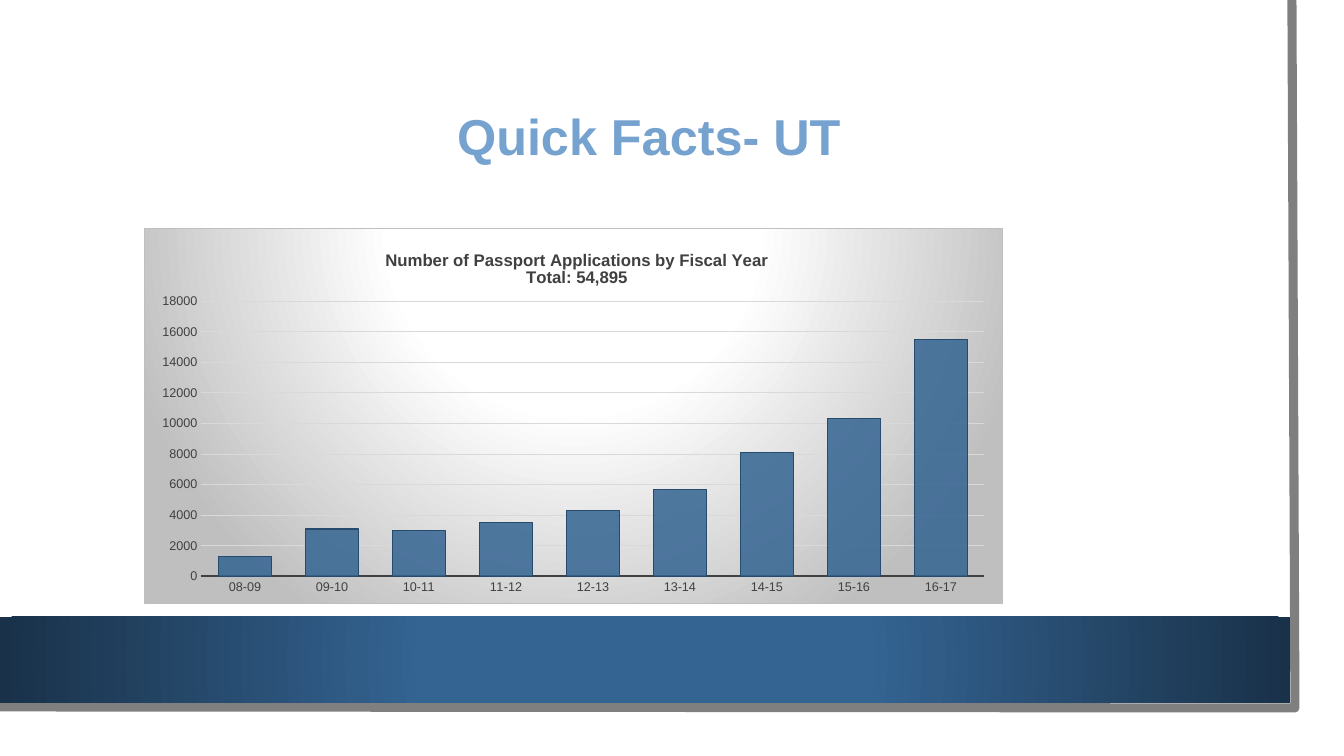
from lxml import etree
from pptx import Presentation
from pptx.chart.data import CategoryChartData
from pptx.dml.color import RGBColor
from pptx.enum.chart import XL_CHART_TYPE, XL_TICK_MARK
from pptx.enum.shapes import MSO_SHAPE
from pptx.enum.text import MSO_ANCHOR, PP_ALIGN
from pptx.oxml import parse_xml
from pptx.oxml.ns import nsdecls, qn
from pptx.util import Pt

COLUMNS = XL_CHART_TYPE.COLUMN_CLUSTERED
NO_TICK = XL_TICK_MARK.NONE
RECT = MSO_SHAPE.RECTANGLE
MIDDLE = MSO_ANCHOR.MIDDLE
CENTER = PP_ALIGN.CENTER

TITLE = "Quick Facts- UT"
CHART_TITLE = ["Number of Passport Applications by Fiscal Year", "Total: 54,895"]
APPLICATIONS = {
    "08-09": 1300, "09-10": 3100, "10-11": 3000, "11-12": 3500, "12-13": 4300,
    "13-14": 5700, "14-15": 8100, "15-16": 10300, "16-17": 15500,
}
FONT = "Arial"
FRAME = [(1292, 0), (1295, 708), (-3, 707)]
BAND = (0, 617, 1290, 86)
TITLE_BOX = (76, 76, 1146, 127)
CHART_BOX = (144, 228, 859, 376)
PLOT_BOX = (201, 301, 784, 276)
CHART_TITLE_BOX = (382, 246, 383, 36)
BAND_STOPS = [(0, "346492"), (34, "346492"), (100, "193149")]
CHART_STOPS = [(0, "FFFFFF"), (39, "FFFFFF"), (100, "BFBFBF")]
EMU_PER_PX = 914400 / 100.8


def px(n):
    return round(n * EMU_PER_PX)


def box(rect):
    return [px(n) for n in rect]


def rgb(color):
    return RGBColor.from_string(color)


def set_font(font, size, color, bold=False):
    font.name, font.size, font.bold = FONT, Pt(size), bold
    font.color.rgb = rgb(color)


def set_line(line, color, width):
    line.color.rgb = rgb(color)
    line.width = Pt(width)


def write(tf, lines, size, color, bold=False, spacing=None):
    for i, text in enumerate(lines):
        p = tf.paragraphs[0] if i == 0 else tf.add_paragraph()
        p.alignment = CENTER
        p.line_spacing = spacing
        r = p.add_run()
        r.text = text
        set_font(r.font, size, color, bold)


def radial(stops, top, bottom):
    gs = "".join(
        f'<a:gs pos="{pos * 1000}"><a:srgbClr val="{color}"/></a:gs>' for pos, color in stops
    )
    return parse_xml(
        f'<a:gradFill {nsdecls("a")} rotWithShape="1"><a:gsLst>{gs}</a:gsLst>'
        f'<a:path path="circle"><a:fillToRect l="50000" t="{top * 1000}" '
        f'r="50000" b="{bottom * 1000}"/></a:path></a:gradFill>'
    )


def place(element, index, rect, inner=False):
    for old in element.findall(qn("c:layout")):
        element.remove(old)
    left, top, width, height = CHART_BOX
    x, y, w, h = rect
    values = [("xMode", "edge"), ("yMode", "edge"),
              ("x", round((x - left) / width, 4)), ("y", round((y - top) / height, 4))]
    if inner:
        values = [("layoutTarget", "inner"), *values,
                  ("w", round(w / width, 4)), ("h", round(h / height, 4))]
    layout = parse_xml(f'<c:layout {nsdecls("c")}><c:manualLayout/></c:layout>')
    for tag, value in values:
        etree.SubElement(layout[0], qn(f"c:{tag}")).set("val", str(value))
    element.insert(index, layout)


def add_frame(slide):
    fb = slide.shapes.build_freeform(*FRAME[0], scale=EMU_PER_PX)
    fb.add_line_segments(FRAME[1:], close=False)
    sp = fb.convert_to_shape()
    sp.shadow.inherit = False
    sp.fill.background()
    set_line(sp.line, "7F7F7F", 6.5)


def add_band(slide):
    sp = slide.shapes.add_shape(RECT, *box(BAND))
    sp.shadow.inherit = False
    sp.line.fill.background()
    sp.fill.solid()
    solid = sp.element.spPr.find(qn("a:solidFill"))
    solid.getparent().replace(solid, radial(BAND_STOPS, 50, 50))


def add_title(slide):
    sp = slide.shapes.title
    sp.left, sp.top, sp.width, sp.height = box(TITLE_BOX)
    sp.text_frame.vertical_anchor = MIDDLE
    write(sp.text_frame, [TITLE], 36, "75A2CE", bold=True, spacing=0.9)


def style_axis(axis):
    axis.major_tick_mark = axis.minor_tick_mark = NO_TICK
    set_font(axis.tick_labels.font, 9, "404040")


def add_applications_chart(slide):
    data = CategoryChartData()
    data.categories = list(APPLICATIONS)
    data.add_series("Series 1", list(APPLICATIONS.values()))
    chart = slide.shapes.add_chart(COLUMNS, *box(CHART_BOX), data).chart
    body = chart.element.find(qn("c:chart"))
    set_font(chart.font, 10, "000000")
    chart.has_legend = False
    chart.has_title = True
    write(chart.chart_title.text_frame, CHART_TITLE, 12, "404040", bold=True)

    plot = chart.plots[0]
    plot.gap_width = 65
    plot.vary_by_categories = False
    fmt = plot.series[0].format
    fmt.fill.solid()
    fmt.fill.fore_color.rgb = rgb("346492")
    color = next(next(body.iter(qn("c:ser"))).iter(qn("a:srgbClr")))
    etree.SubElement(color, qn("a:alpha")).set("val", "85000")
    set_line(fmt.line, "274B6D", 0.75)

    years, counts = chart.category_axis, chart.value_axis
    style_axis(years)
    style_axis(counts)
    set_line(years.format.line, "404040", 1.5)
    counts.format.line.fill.background()
    counts.minimum_scale, counts.maximum_scale, counts.major_unit = 0, 18000, 2000
    counts.has_major_gridlines = True
    set_line(counts.major_gridlines.format.line, "D9D9D9", 0.75)

    place(body.find(qn("c:plotArea")), 0, PLOT_BOX, inner=True)
    place(body.find(qn("c:title")), 1, CHART_TITLE_BOX)
    background = parse_xml(
        f'<c:spPr {nsdecls("c", "a")}><a:ln w="{int(Pt(0.75))}"><a:solidFill>'
        '<a:srgbClr val="BFBFBF"/></a:solidFill></a:ln></c:spPr>'
    )
    background.insert(0, radial(CHART_STOPS, -80, 180))
    body.addnext(background)


def main():
    prs = Presentation()
    prs.slide_width, prs.slide_height = px(1344), px(756)
    slide = prs.slides.add_slide(prs.slide_layouts[5])
    add_frame(slide)
    add_band(slide)
    add_title(slide)
    add_applications_chart(slide)
    prs.save("out.pptx")


if __name__ == "__main__":
    main()
